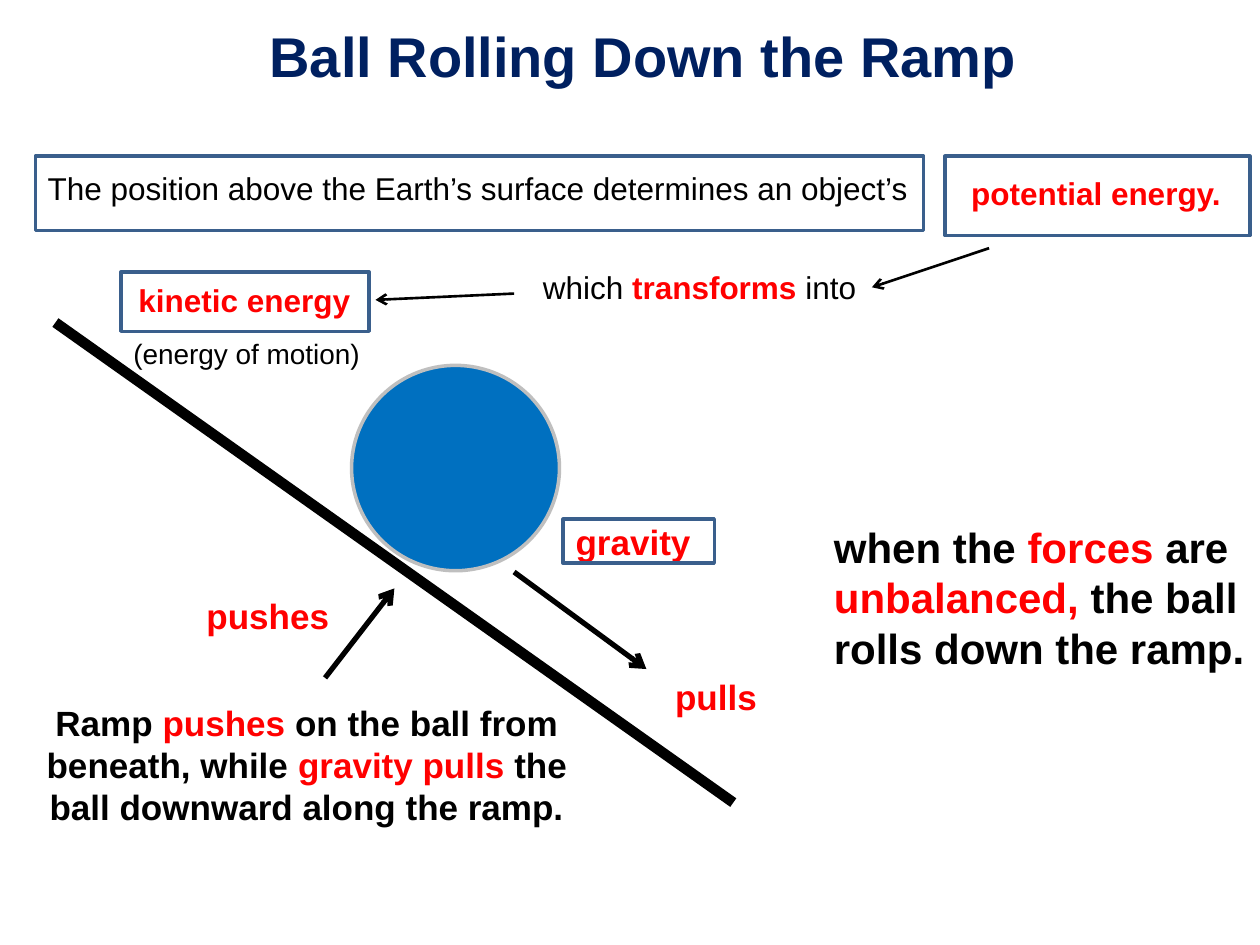
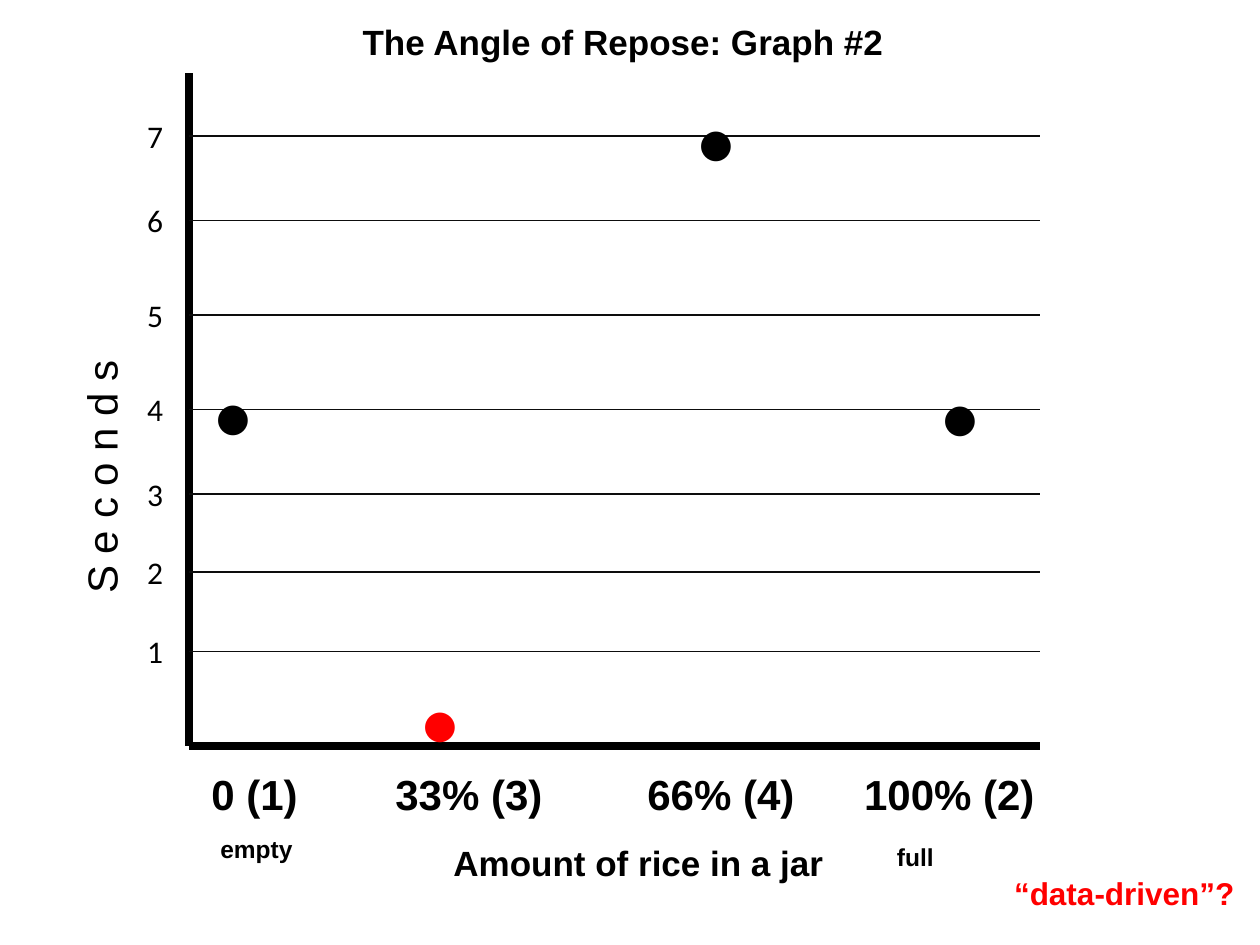
import pptx
import pptx.dml.color
import pptx.enum.shapes
import pptx.enum.text
import pptx.oxml.ns
import pptx.util
from dataclasses import dataclass
from lxml import etree

Inches = pptx.util.Inches
Pt = pptx.util.Pt
Shape = pptx.enum.shapes.MSO_SHAPE
Align = pptx.enum.text.PP_ALIGN
qn = pptx.oxml.ns.qn

COLORS = {
    "black": "000000", "red": "FF0000", "navy": "002060", "frame": "3A5F8C",
    "ball": "0070C0", "rim": "BFBFBF", "grid": "0D0D0D", "white": "FFFFFF",
}


@dataclass
class Note:
    """Text box; parts between bars are set in bold red."""
    text: str
    left: float
    top: float
    width: float
    height: float
    size: int
    bold: bool = False
    ink: str = "black"
    face: str = "Arial"
    wrap: bool = False
    align: Align = Align.LEFT
    turn: int = 0
    tabs: tuple[float, ...] = ()


@dataclass
class Line:
    x1: float
    y1: float
    x2: float
    y2: float
    weight: float
    arrow: bool = False
    ink: str = "black"


@dataclass
class Form:
    left: float
    top: float
    width: float
    height: float
    kind: Shape = Shape.RECTANGLE
    fill: str = ""
    edge: str = "frame"


def color(name: str) -> pptx.dml.color.RGBColor:
    return pptx.dml.color.RGBColor.from_string(COLORS[name])


def add_note(slide, note: Note) -> None:
    box = slide.shapes.add_textbox(Inches(note.left), Inches(note.top),
                                   Inches(note.width), Inches(note.height))
    box.rotation = note.turn
    frame = box.text_frame
    frame.word_wrap = note.wrap
    frame.auto_size = pptx.enum.text.MSO_AUTO_SIZE.SHAPE_TO_FIT_TEXT
    para = frame.paragraphs[0]
    para.alignment = note.align
    if note.tabs:
        stops = etree.SubElement(para._p.get_or_add_pPr(), qn("a:tabLst"))
        for stop in note.tabs:
            etree.SubElement(stops, qn("a:tab"), pos=str(Inches(stop)), algn="l")
    font = para.font
    font.name, font.size, font.bold = note.face, Pt(note.size), note.bold
    font.color.rgb = color(note.ink)
    for i, part in enumerate(note.text.split("|")):
        if part:
            run = para.add_run()
            run.text = part
            if i % 2:
                run.font.bold = True
                run.font.color.rgb = color("red")


def add_line(slide, line: Line) -> None:
    item = slide.shapes.add_connector(
        pptx.enum.shapes.MSO_CONNECTOR.STRAIGHT, Inches(line.x1),
        Inches(line.y1), Inches(line.x2), Inches(line.y2))
    item.line.color.rgb = color(line.ink)
    item.line.width = Pt(line.weight)
    if line.arrow:
        etree.SubElement(item.line._get_or_add_ln(), qn("a:tailEnd"), type="arrow")
    etree.SubElement(item._element.spPr, qn("a:effectLst"))


def add_form(slide, form: Form) -> None:
    item = slide.shapes.add_shape(form.kind, Inches(form.left), Inches(form.top),
                                  Inches(form.width), Inches(form.height))
    item.shadow.inherit = False
    if form.fill:
        item.fill.solid()
        item.fill.fore_color.rgb = color(form.fill)
    else:
        item.fill.background()
    item.line.color.rgb = color(form.edge)
    item.line.width = Pt(2)


DRAW = {Note: add_note, Line: add_line, Form: add_form}


def add_page(deck, items: list) -> None:
    slide = deck.slides.add_slide(deck.slide_layouts[6])
    slide.background.fill.solid()
    slide.background.fill.fore_color.rgb = color("white")
    for item in items:
        DRAW[type(item)](slide, item)


def ramp() -> list:
    return [
        # Title and captions
        Note("Ball Rolling Down the Ramp", 2.04, 0.12, 6.18, 0.64, 32, True, "navy"),
        Note("Ramp |pushes| on the ball from beneath, while |gravity pulls| the "
             "ball downward along the ramp.", 0.27, 5.52, 4.33, 1.11, 20, True,
             wrap=True, align=Align.CENTER),
        Note("when the |forces |are |unbalanced, |the ball rolls down the ramp.",
             6.52, 4.09, 3.63, 1.31, 24, True, wrap=True),
        # Energy chain
        Note("The position above the Earth’s surface determines an object’s",
             0.28, 1.29, 7.3, 0.4, 18, wrap=True),
        Note("potential energy.", 7.61, 1.33, 2.2, 0.4, 18, True, "red"),
        Note("which| transforms |into", 4.21, 2.08, 2.71, 0.4, 18),
        Note("kinetic energy", 1, 2.18, 1.9, 0.4, 18, True, "red"),
        Note("(energy of motion)", 0.96, 2.62, 2.03, 0.37, 16),
        Line(7.85, 1.97, 6.92, 2.28, 1.5, True),
        Line(4.08, 2.33, 2.98, 2.38, 1.5, True),
        # Forces
        Note("gravity", 4.47, 4.08, 1.12, 0.44, 20, True, "red"),
        Note("pulls", 5.26, 5.31, 0.86, 0.44, 20, True, "red"),
        Note("pushes", 1.54, 4.67, 1.19, 0.44, 20, True, "red"),
        # Ramp, ball and force arrows
        Line(0.44, 2.56, 5.82, 6.37, 6),
        Form(2.79, 2.9, 1.65, 1.63, Shape.OVAL, "ball", "rim"),
        Line(2.58, 5.38, 3.13, 4.67, 3, True),
        Line(4.08, 4.54, 5.13, 5.31, 3, True),
        # Frames
        Form(0.28, 1.24, 7.05, 0.59),
        Form(7.5, 1.24, 2.42, 0.63),
        Form(4.47, 4.12, 1.2, 0.35),
        Form(0.96, 2.16, 1.97, 0.47),
    ]


def graph() -> list:
    left, right, base = 1.5, 8.25, 5.92
    # Axes
    items = [Line(left, 0.58, left, base, 4.5), Line(left, base, right, base, 4.5)]
    # Grid lines with their values, from 1 up
    for value, y in enumerate((5.17, 4.54, 3.92, 3.25, 2.5, 1.75, 1.08), 1):
        items += [Line(left, y, right, y, 0.75, ink="grid"),
                  Note(str(value), 1.07, y - 0.2, 0.33, 0.4, 18, face="Calibri")]
    # Data points
    for x, y, ink in ((1.59, 2.81, "black"), (3.23, 5.25, "red"),
                      (5.42, 0.64, "black"), (7.36, 2.82, "black")):
        items.append(Note("•", x, y, 0.54, 0.91, 48, ink=ink, face="Calibri"))
    # Title and labels
    return items + [
        Note("The Angle of Repose: Graph #2", 2.78, 0.11, 4.37, 0.44, 20, True),
        Note("S e c o n d s", -0.56, 3.2, 2.72, 0.5, 24, wrap=True, turn=270),
        Note("0 (1)\t33% (3)\t66% (4)\t100% (2)", 1.58, 6.05, 7, 0.5, 24, True,
             wrap=True, tabs=(1.46, 3.46, 5.18)),
        Note("Amount of rice in a jar", 3.5, 6.63, 3.16, 0.44, 20, True),
        Note("empty", 1.65, 6.57, 0.78, 0.34, 14, True),
        Note("full", 7.02, 6.63, 0.49, 0.34, 14, True),
        Note("“data-driven”?", 7.95, 6.89, 1.96, 0.4, 18, True, "red"),
    ]


def main() -> None:
    deck = pptx.Presentation()
    deck.slide_width, deck.slide_height = Inches(10), Inches(7.5)
    for items in (ramp(), graph()):
        add_page(deck, items)
    deck.save("out.pptx")


if __name__ == "__main__":
    main()
